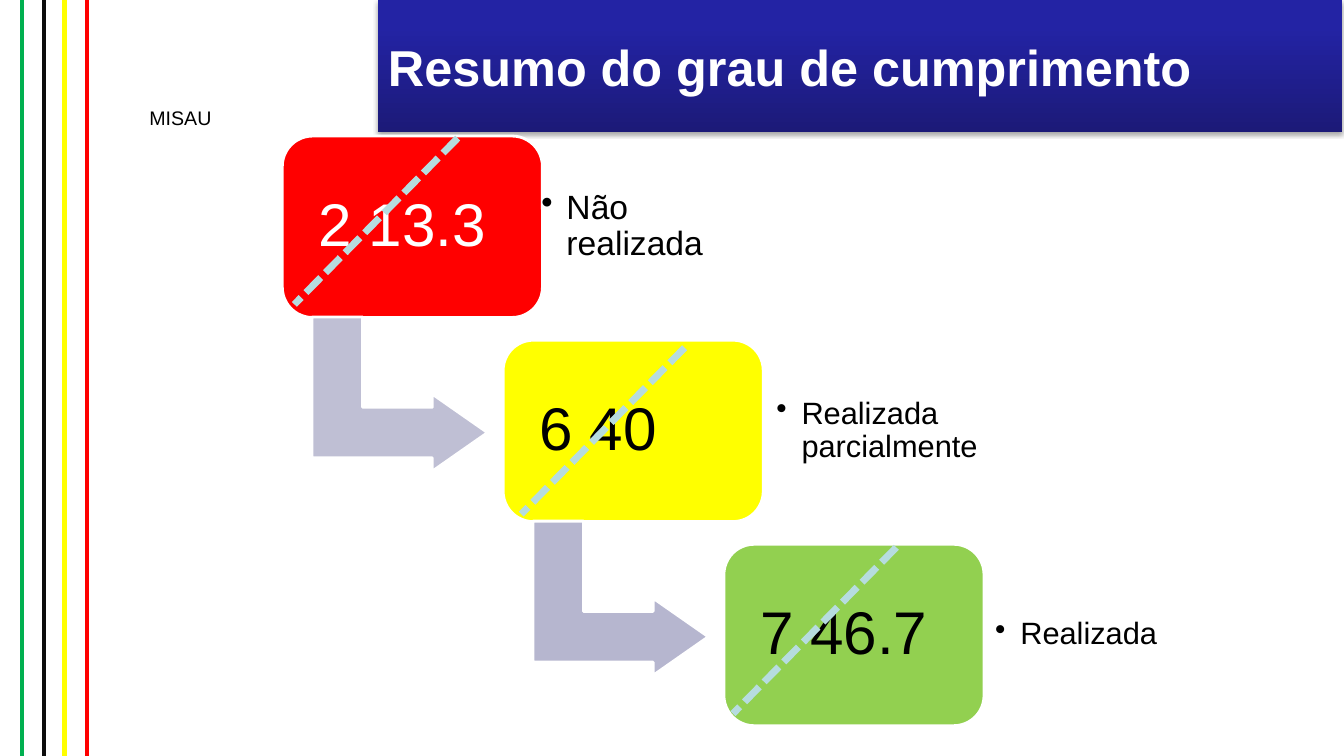
import pptx
import pptx.util
import pptx.dml.color
import pptx.enum.dml
import pptx.enum.shapes
import pptx.enum.text
import pptx.oxml
import pptx.oxml.ns

Inches = pptx.util.Inches
Pt = pptx.util.Pt
RGBColor = pptx.dml.color.RGBColor
SHAPES = pptx.enum.shapes.MSO_SHAPE
ALIGN = pptx.enum.text.PP_ALIGN
NAMESPACE = pptx.oxml.ns.nsdecls("a")

WHITE = RGBColor(0xFF, 0xFF, 0xFF)
BLACK = RGBColor(0x00, 0x00, 0x00)
NEAR_BLACK = RGBColor(0x0D, 0x0D, 0x0D)
GREEN = RGBColor(0x00, 0xB0, 0x50)
LIME = RGBColor(0x92, 0xD0, 0x50)
YELLOW = RGBColor(0xFF, 0xFF, 0x00)
RED = RGBColor(0xFF, 0x00, 0x00)
PALE_TEAL = RGBColor(0xB6, 0xDC, 0xDF)
TITLE_TOP = RGBColor(0x23, 0x23, 0xA4)
TITLE_BOTTOM = RGBColor(0x1C, 0x1A, 0x78)
ARROW_COLORS = [RGBColor(0xBF, 0xBF, 0xD4), RGBColor(0xB6, 0xB6, 0xCF)]

presentation = pptx.Presentation()
presentation.slide_width = Inches(13.33)
presentation.slide_height = Inches(7.5)
slide = presentation.slides.add_slide(presentation.slide_layouts[6])


def add_line(x1, y1, x2, y2, color, width):
    line = slide.shapes.add_connector(
        pptx.enum.shapes.MSO_CONNECTOR.STRAIGHT,
        Inches(x1), Inches(y1), Inches(x2), Inches(y2))
    line.line.color.rgb = color
    line.line.width = Pt(width)
    line._element.spPr.append(pptx.oxml.parse_xml(f"<a:effectLst {NAMESPACE}/>"))
    return line


def write_text(shape, text, size, color, margin=0.1, align=ALIGN.LEFT,
               spacing=None, extra=None, indent=0, bold=False):
    frame = shape.text_frame
    settings = {"word_wrap": True,
                "vertical_anchor": pptx.enum.text.MSO_ANCHOR.MIDDLE,
                "margin_left": Inches(margin), "margin_right": Inches(margin),
                "margin_top": Inches(margin), "margin_bottom": Inches(margin)}
    for name, value in settings.items():
        setattr(frame, name, value)
    paragraph = frame.paragraphs[0]
    paragraph.text = text
    paragraph.alignment = align
    paragraph.line_spacing = spacing
    if extra:
        properties = paragraph._p.get_or_add_pPr()
        properties.set("marL", str(Inches(indent)))
        properties.set("indent", str(Inches(-indent)))
        properties.append(pptx.oxml.parse_xml(extra))
    font = paragraph.runs[0].font
    for name, value in {"name": "Arial", "size": Pt(size), "bold": bold}.items():
        setattr(font, name, value)
    font.color.rgb = color


for x, color in [(0.22, GREEN), (0.44, NEAR_BLACK), (0.64, YELLOW), (0.86, RED)]:
    add_line(x, 0, x, 7.5, color, 3)

ministry = slide.shapes.add_textbox(Inches(1.07), Inches(1), Inches(1.44), Inches(0.34))
write_text(ministry, "MISAU", 14, BLACK, margin=0.05, align=ALIGN.CENTER)

title = slide.shapes.add_shape(
    SHAPES.RECTANGLE, Inches(3.75), Inches(0), Inches(9.56), Inches(1.31))
title.fill.gradient()
title.fill.gradient_angle = 270
for stop, color, position in zip(
        title.fill.gradient_stops, [TITLE_TOP, TITLE_BOTTOM], [0.2, 1]):
    stop.color.rgb = color
    stop.position = position
title.line.fill.background()
title.shadow.inherit = False
title._element.spPr.find(pptx.oxml.ns.qn("a:effectLst")).append(pptx.oxml.parse_xml(
    f'<a:outerShdw {NAMESPACE} blurRad="40000" dist="23000" dir="5400000" rotWithShape="0">'
    '<a:srgbClr val="000000"><a:alpha val="35000"/></a:srgbClr></a:outerShdw>'))
write_text(title, "Resumo do grau de cumprimento", 36, WHITE, bold=True)

CARD_LEFT, CARD_TOP = 2.8, 1.35
STEP_X, STEP_Y = 2.19, 4.05 / 2
BULLET = f'<a:buChar {NAMESPACE} char="•"/>'
TAB = f'<a:tabLst {NAMESPACE}><a:tab pos="{Inches(0.83)}" algn="l"/></a:tabLst>'

steps = [
    ("2\t13.3", RED, WHITE, "Não realizada", 24, 5.27, 2.09, 0.1),
    ("6\t40", YELLOW, BLACK, "Realizada parcialmente", 22, 7.61, 2.24, 0.09),
    ("7\t46.7", LIME, BLACK, "Realizada", 22, 9.75, 1.87, 0.12),
]
for index, (figures, fill, ink, label, size, label_left, label_width, margin) in enumerate(steps):
    left = CARD_LEFT + index * STEP_X
    top = CARD_TOP + index * STEP_Y

    card = slide.shapes.add_shape(
        SHAPES.ROUNDED_RECTANGLE, Inches(left), Inches(top), Inches(2.58), Inches(1.8))
    blocks = [(card, fill)]
    if index < len(ARROW_COLORS):
        arrow = slide.shapes.add_shape(
            SHAPES.BENT_UP_ARROW, Inches(left + 0.4), Inches(top + 1.69),
            Inches(1.53), Inches(1.74))
        arrow.rotation = 90
        for position, value in enumerate([0.328, 0.25, 0.358]):
            arrow.adjustments[position] = value
        blocks.append((arrow, ARROW_COLORS[index]))
    for block, color in blocks:
        block.shadow.inherit = False
        block.fill.solid()
        block.fill.fore_color.rgb = color
        block.line.color.rgb = WHITE
        block.line.width = Pt(2)
    write_text(card, figures, 43, ink, margin=0.27, spacing=0.9, extra=TAB)

    label_box = slide.shapes.add_textbox(
        Inches(label_left), Inches(top + 0.17), Inches(label_width), Inches(1.46))
    write_text(label_box, label, size, BLACK, margin=margin, spacing=0.9,
               extra=BULLET, indent=0.25)

for x, y in [(4.54, 1.37), (8.89, 5.43), (6.79, 3.45)]:
    divider = add_line(x, y, x - 1.62, y + 1.65, PALE_TEAL, 5)
    divider.line.dash_style = pptx.enum.dml.MSO_LINE.SQUARE_DOT

presentation.save("out.pptx")
